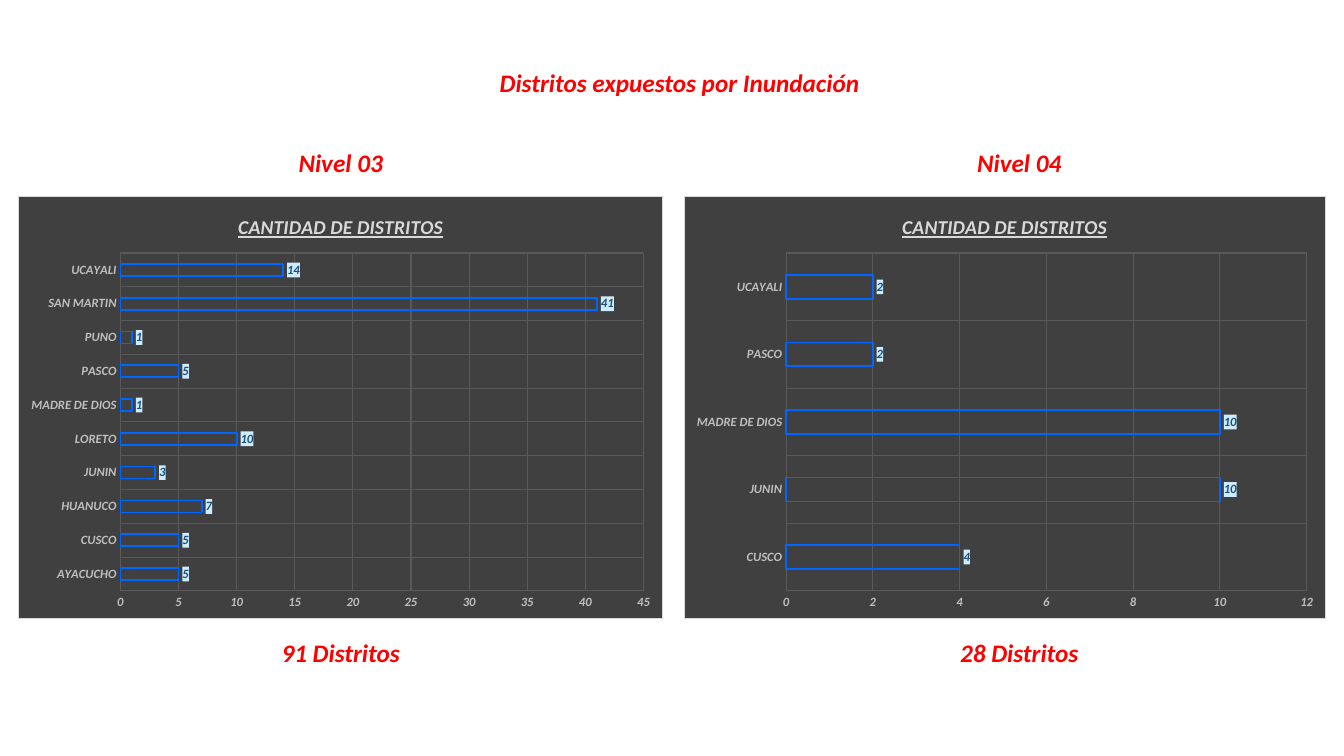
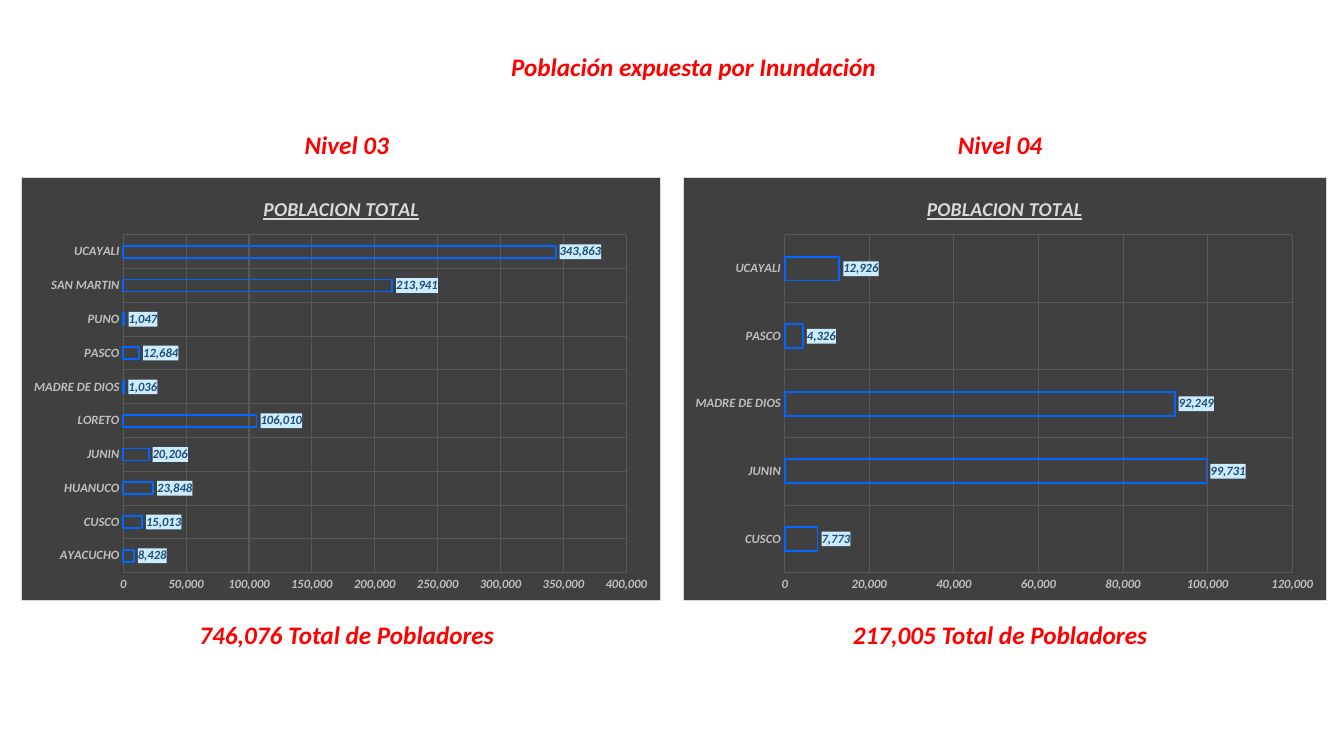
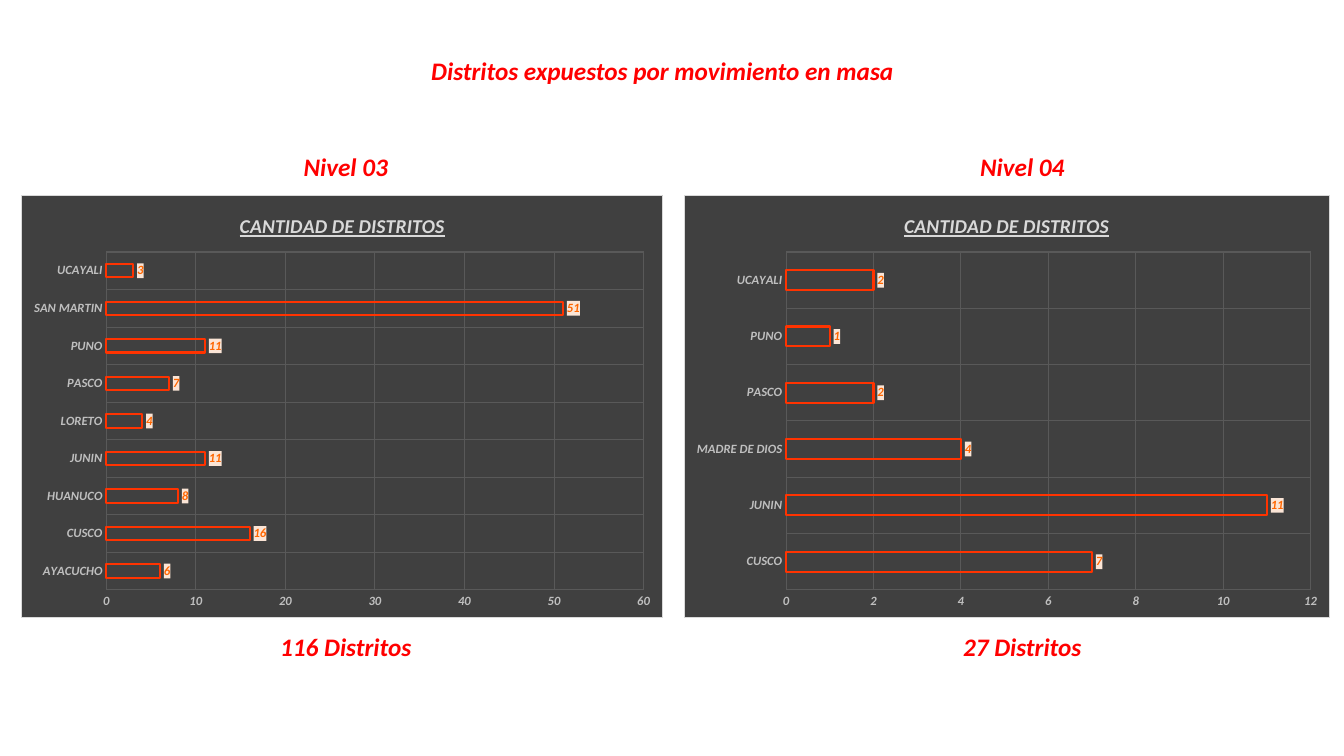
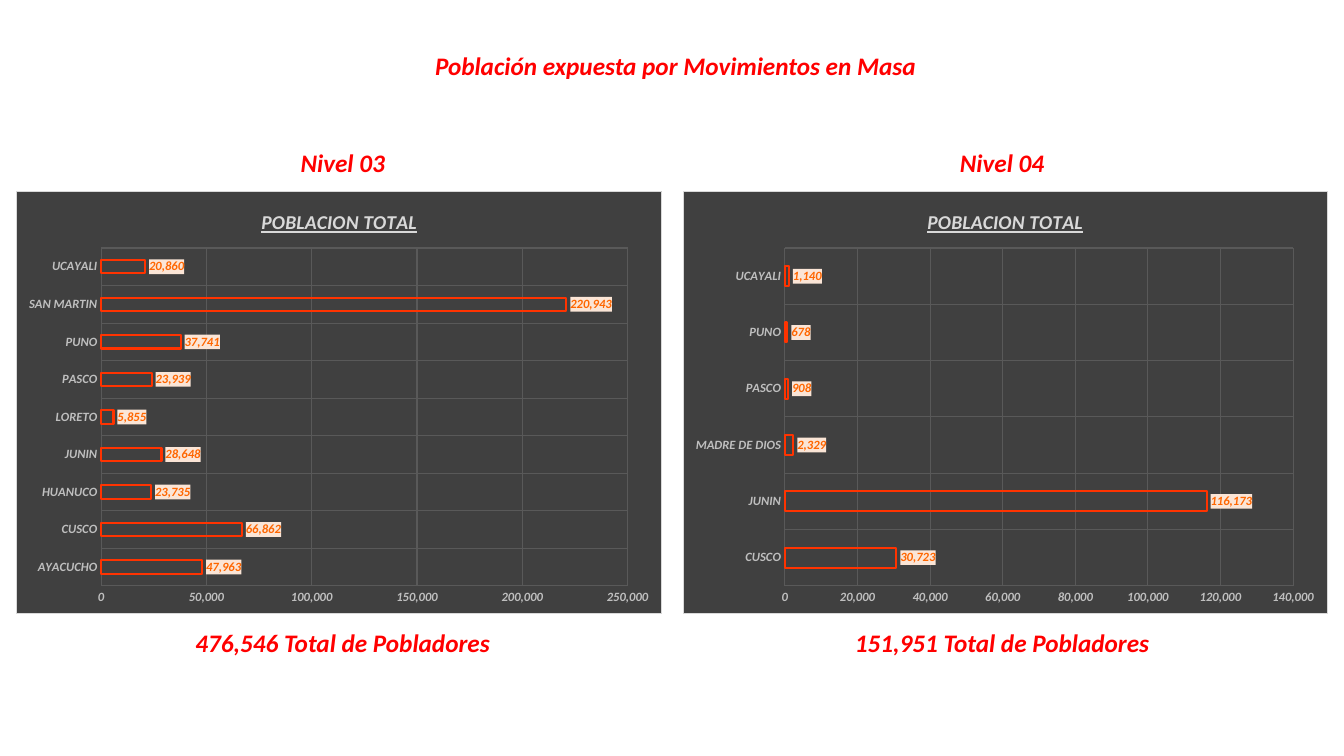
from pptx import Presentation
from pptx import util as u
from pptx.chart.data import CategoryChartData
from pptx.dml.color import RGBColor
from pptx.enum import chart as ch, text as tx
from pptx.oxml import parse_xml
from pptx.oxml.ns import nsdecls, qn

FONT = "Calibri"
RED, DARK, GRID, PALE, GREY = "FF0000", "404040", "595959", "D9D9D9", "BFBFBF"
# line colour, line width, label colour, label fill
BLUE = ("0066FF", 1.25, "1F4E79", "CCECFF")
FIRE = ("FF3300", 1.5, "FF6600", "FBE5D6")
HIGH, LINE = 4.2, 0.4  # heights of a chart and of a line of text

NINE = ["AYACUCHO", "CUSCO", "HUANUCO", "JUNIN", "LORETO",
        "PASCO", "PUNO", "SAN MARTIN", "UCAYALI"]
TEN = NINE[:5] + ["MADRE DE DIOS"] + NINE[5:]
FIVE = ["CUSCO", "JUNIN", "MADRE DE DIOS", "PASCO", "UCAYALI"]
SIX = FIVE[:4] + ["PUNO", "UCAYALI"]

COUNT, PEOPLE = "CANTIDAD DE DISTRITOS", "POBLACION TOTAL"

# panel: left, width, centre of its captions, level, total, names, values
SLIDES = [
    dict(title="Distritos expuestos por Inundación", mid=6.74, high=0.62,
         top=1.94, gap=0.13, head=COUNT, look=BLUE, panels=[
             (0.18, 6.4, 3.38, "Nivel 03", "91 Distritos", TEN,
              [5, 5, 7, 3, 10, 1, 5, 1, 41, 14]),
             (6.78, 6.37, 10.11, "Nivel 04", "28 Distritos", FIVE,
              [4, 10, 10, 2, 2])]),
    dict(title="Población expuesta por Inundación", mid=6.88, high=0.46,
         top=1.76, gap=0.13, head=PEOPLE, look=BLUE, panels=[
             (0.21, 6.35, 3.44, "Nivel 03", "746,076 Total de Pobladores", TEN,
              [8428, 15013, 23848, 20206, 106010,
               1036, 12684, 1047, 213941, 343863]),
             (6.77, 6.39, 9.92, "Nivel 04", "217,005 Total de Pobladores", FIVE,
              [7773, 99731, 92249, 4326, 12926])]),
    dict(title="Distritos expuestos por movimiento en masa", mid=6.57, high=0.5,
         top=1.93, gap=0.08, head=COUNT, look=FIRE, panels=[
             (0.21, 6.37, 3.43, "Nivel 03", "116 Distritos", NINE,
              [6, 16, 8, 11, 4, 7, 11, 51, 3]),
             (6.78, 6.41, 10.14, "Nivel 04", "27 Distritos", SIX,
              [7, 11, 4, 2, 1, 2])]),
    dict(title="Población expuesta por Movimientos en Masa", mid=6.7, high=0.45,
         top=1.89, gap=0.08, head=PEOPLE, look=FIRE, panels=[
             (0.16, 6.41, 3.4, "Nivel 03", "476,546 Total de Pobladores", NINE,
              [47963, 66862, 23735, 28648, 5855,
               23939, 37741, 220943, 20860]),
             (6.77, 6.4, 9.94, "Nivel 04", "151,951 Total de Pobladores", SIX,
              [30723, 116173, 2329, 908, 678, 1140])]),
]


def color(hexa):
    return RGBColor.from_string(hexa)


def style(font, size, hexa):
    font.name, font.size = FONT, u.Pt(size)
    font.bold = font.italic = True
    font.color.rgb = color(hexa)


def write(frame, words):
    """Set one centred red line in a text frame."""
    frame.text = words
    frame.word_wrap = True
    frame.auto_size = tx.MSO_AUTO_SIZE.NONE
    frame.vertical_anchor = tx.MSO_ANCHOR.MIDDLE
    para = frame.paragraphs[0]
    para.alignment = tx.PP_ALIGN.CENTER
    style(para.runs[0].font, 18, RED)


def caption(slide, words, mid, top, width):
    box = slide.shapes.add_textbox(u.Inches(mid - width / 2), u.Inches(top),
                                   u.Inches(width), u.Inches(LINE))
    write(box.text_frame, words)


def heading(slide, words, mid, top):
    width = 5.2
    box = slide.shapes.title
    box.left, box.top = u.Inches(mid - width / 2), u.Inches(top)
    box.width, box.height = u.Inches(width), u.Inches(LINE)
    write(box.text_frame, words)


def area(fill, edge=None):
    """Give the fill and border element of a chart part."""
    line = (f'<a:ln w="9525"><a:solidFill><a:srgbClr val="{edge}"/>'
            '</a:solidFill></a:ln>' if edge else '<a:ln><a:noFill/></a:ln>')
    return parse_xml(f'<c:spPr {nsdecls("c", "a")}><a:solidFill>'
                     f'<a:srgbClr val="{fill}"/></a:solidFill>{line}</c:spPr>')


def place(chart, width, names, head):
    """Fix the inner plot area, leaving room for the axis labels."""
    left = 1.01 if "MADRE DE DIOS" in names else 0.84
    right = 0.34 if head == PEOPLE else 0.19
    spots = dict(x=left / width, y=0.135, w=1 - (left + right) / width, h=0.8)
    parts = "".join(f'<c:{key} val="{val:.3f}"/>' for key, val in spots.items())
    plot = chart._chartSpace.chart.plotArea
    for old in plot.findall(qn("c:layout")):
        plot.remove(old)
    plot.insert(0, parse_xml(
        f'<c:layout {nsdecls("c")}><c:manualLayout>'
        '<c:layoutTarget val="inner"/><c:xMode val="edge"/>'
        f'<c:yMode val="edge"/>{parts}</c:manualLayout></c:layout>'))


def bars(slide, box, head, look, names, vals):
    edge, thick, ink, back = look
    data = CategoryChartData(number_format="#,##0")
    data.categories = names
    data.add_series(head, vals)
    chart = slide.shapes.add_chart(ch.XL_CHART_TYPE.BAR_CLUSTERED,
                                   *map(u.Inches, box), data).chart
    chart.has_legend = False
    chart.font.name, chart.font.size = FONT, u.Pt(10)
    chart._chartSpace.find(qn("c:txPr")).addprevious(area(DARK, PALE))
    place(chart, box[2], names, head)

    chart.has_title = True
    chart.chart_title.include_in_layout = False
    frame = chart.chart_title.text_frame
    frame.text = head
    font = frame.paragraphs[0].runs[0].font
    style(font, 14, PALE)
    font.underline = True

    for axis in (chart.category_axis, chart.value_axis):
        axis.major_tick_mark = axis.minor_tick_mark = ch.XL_TICK_MARK.NONE
        axis.format.line.fill.background()
        axis.has_major_gridlines = True
        grid = axis.major_gridlines.format.line
        grid.width, grid.color.rgb = u.Pt(0.75), color(GRID)
        style(axis.tick_labels.font, 9, GREY)
    ticks = chart.value_axis.tick_labels
    ticks.number_format, ticks.number_format_is_linked = "#,##0", False

    plot = chart.plots[0]
    plot.gap_width, plot.overlap, plot.vary_by_categories = 182, -50, False
    row = plot.series[0]
    row.invert_if_negative = False
    row.format.fill.background()
    row.format.line.width = u.Pt(thick)
    row.format.line.color.rgb = color(edge)
    tags = row.data_labels
    tags.show_value = True
    tags.number_format, tags.number_format_is_linked = "#,##0", False
    tags.position = ch.XL_LABEL_POSITION.OUTSIDE_END
    style(tags.font, 9, ink)
    tags._element.find(qn("c:txPr")).addprevious(area(back))


def panel(slide, page, left, width, mid, level, total, names, vals):
    """Place a chart with its level above and its total below."""
    top, gap = page["top"], page["gap"]
    caption(slide, level, mid, top - gap - LINE, 1.1)
    bars(slide, (left, top, width, HIGH), page["head"], page["look"],
         names, vals)
    caption(slide, total, mid, top + HIGH + gap, 3.36)


def main():
    deck = Presentation()
    deck.slide_width, deck.slide_height = u.Inches(13.33), u.Inches(7.5)
    for page in SLIDES:
        slide = deck.slides.add_slide(deck.slide_layouts[5])
        heading(slide, page["title"], page["mid"], page["high"])
        for item in page["panels"]:
            panel(slide, page, *item)
    deck.save("out.pptx")


if __name__ == "__main__":
    main()
